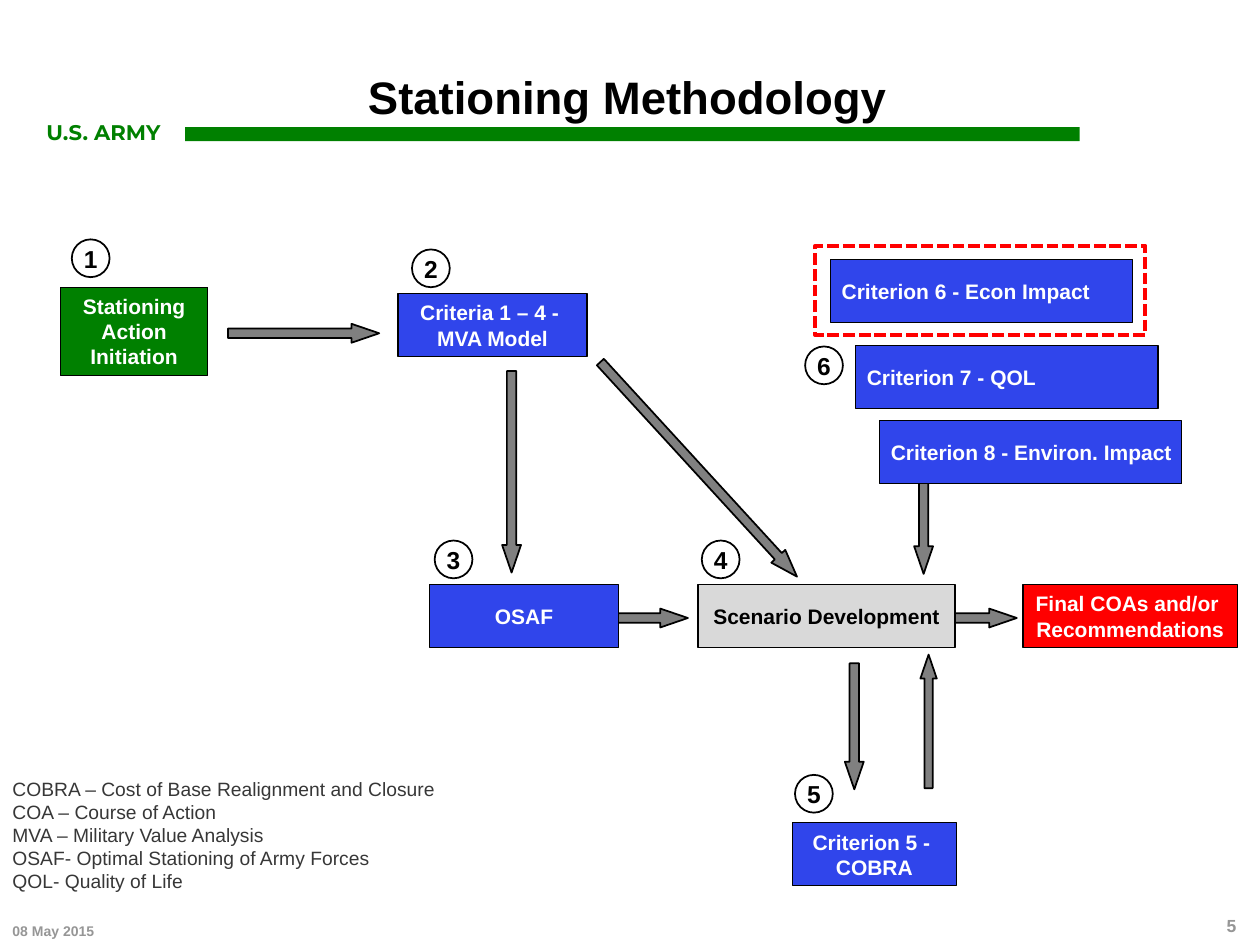
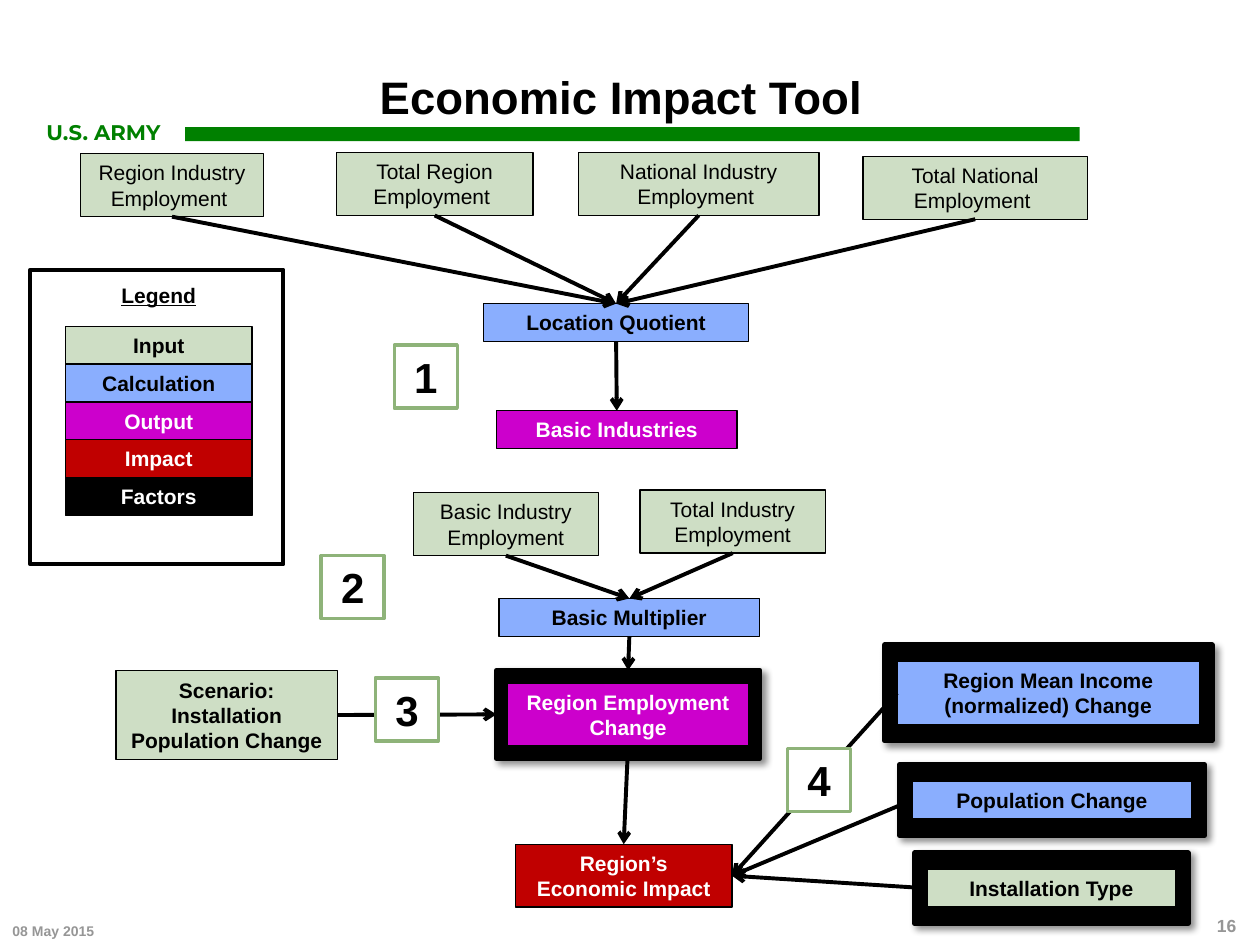
import dataclasses

import lxml.etree
import pptx
import pptx.dml.color
import pptx.enum.dml
import pptx.enum.shapes
import pptx.enum.text
import pptx.oxml.ns
import pptx.util

Inches = pptx.util.Inches
Pt = pptx.util.Pt
Shape = pptx.enum.shapes.MSO_SHAPE
Align = pptx.enum.text.PP_ALIGN
Anchor = pptx.enum.text.MSO_ANCHOR
TOP, LEFT, BOTTOM, RIGHT = range(4)


@dataclasses.dataclass(frozen=True)
class Theme:
    """Colours, fonts and type sizes of the deck."""
    black: str = "000000"
    white: str = "FFFFFF"
    green: str = "008000"
    blue: str = "3045EB"
    red: str = "FF0000"
    pale_grey: str = "D9D9D9"
    arrow_grey: str = "808080"
    footer_grey: str = "969696"
    glossary_grey: str = "373737"
    input_green: str = "CEDEC5"
    calculation_blue: str = "8AAEFE"
    output_purple: str = "CC00CC"
    impact_red: str = "C00000"
    tag_green: str = "8EB379"
    font: str = "Arial"
    brand_font: str = "Montserrat"
    title: float = 26
    tag: float = 24
    marker: float = 14
    brand: float = 12.1
    body: float = 12
    glossary: float = 11
    number: float = 10
    date: float = 8


THEME = Theme()
ROLES = {
    "Input": {"fill": THEME.input_green},
    "Calculation": {"fill": THEME.calculation_blue},
    "Output": {"fill": THEME.output_purple, "color": THEME.white},
    "Impact": {"fill": THEME.impact_red, "color": THEME.white},
    "Factors": {"fill": THEME.black, "color": THEME.white},
}
CRITERION = {"fill": THEME.blue, "color": THEME.white}


@dataclasses.dataclass(frozen=True)
class Box:
    """A rectangle in inches."""
    left: float
    top: float
    width: float
    height: float

    def inside(self, left, top, width, height):
        """Return a box placed relative to this one."""
        return Box(self.left + left, self.top + top, width, height)

    def grow(self, across, down):
        """Return this box with a margin added on every side."""
        return Box(self.left - across, self.top - down,
                   self.width + 2 * across, self.height + 2 * down)

    def lengths(self):
        """Return left, top, width and height as lengths."""
        return [Inches(side) for side in dataclasses.astuple(self)]


def rgb(colour):
    """Turn a hex string into a colour."""
    return pptx.dml.color.RGBColor.from_string(colour)


def apply(target, formats):
    """Set every format value on the target."""
    for name, value in formats.items():
        setattr(target, name, value)


def write(shape, text, color=THEME.black, size=THEME.body, bold=True, align=Align.CENTER,
          anchor=Anchor.MIDDLE, wrap=True, inset=(0.1, 0.05), spacing=None,
          font=THEME.font, underline=None):
    """Fill a shape with one paragraph per line of text."""
    across, down = (Inches(margin) for margin in inset)
    frame = shape.text_frame
    apply(frame, {"word_wrap": wrap, "vertical_anchor": anchor,
                  "margin_left": across, "margin_right": across,
                  "margin_top": down, "margin_bottom": down})
    for index, line in enumerate(text.split("\n")):
        paragraph = frame.add_paragraph() if index else frame.paragraphs[0]
        apply(paragraph, {"alignment": align, "line_spacing": spacing})
        run = paragraph.add_run()
        run.text = line
        apply(run.font, {"name": font, "size": Pt(size), "bold": bold, "underline": underline})
        run.font.color.rgb = rgb(color)


def label(slide, box, text, **formats):
    """Add a text box."""
    write(slide.shapes.add_textbox(*box.lengths()), text, **formats)


def block(slide, box, text="", fill=None, line=THEME.black, weight=0.75,
          kind=Shape.RECTANGLE, **formats):
    """Add a preset shape with fill, outline and text."""
    shape = slide.shapes.add_shape(kind, *box.lengths())
    shape.shadow.inherit = False
    if fill:
        shape.fill.solid()
        shape.fill.fore_color.rgb = rgb(fill)
    else:
        shape.fill.background()
    if line:
        shape.line.color.rgb = rgb(line)
        shape.line.width = Pt(weight)
    else:
        shape.line.fill.background()
    if text:
        write(shape, text, **formats)
    return shape


def marker(slide, box, number):
    """Add a numbered step circle."""
    block(slide, box, number, THEME.white, weight=1, kind=Shape.OVAL,
          size=THEME.marker, wrap=False, inset=(0, 0))


def tag(slide, box, number):
    """Add a numbered step square."""
    block(slide, box, number, THEME.white, THEME.tag_green, 2, size=THEME.tag)


def arrow(slide, box, rotation=0):
    """Add a thick grey arrow."""
    shape = block(slide, box, fill=THEME.arrow_grey, weight=1, kind=Shape.RIGHT_ARROW)
    shape.adjustments[0], shape.adjustments[1] = 0.5, 1.46
    shape.rotation = rotation


def factor_frame(slide, box):
    """Add a black frame with a soft shadow."""
    frame = block(slide, box, fill=THEME.black, weight=3)
    effects = frame._element.spPr.find(pptx.oxml.ns.qn("a:effectLst"))
    shadow = lxml.etree.SubElement(
        effects, pptx.oxml.ns.qn("a:outerShdw"), blurRad=str(Pt(4)), dist=str(Pt(3)),
        dir="2700000", algn="tl", rotWithShape="0")
    colour = lxml.etree.SubElement(shadow, pptx.oxml.ns.qn("a:srgbClr"), val=THEME.black)
    lxml.etree.SubElement(colour, pptx.oxml.ns.qn("a:alpha"), val="43000")
    return frame


def link(slide, source, target, leave=BOTTOM, enter=TOP):
    """Connect two shapes with a line that ends in an arrowhead."""
    connector = slide.shapes.add_connector(pptx.enum.shapes.MSO_CONNECTOR.STRAIGHT, 0, 0, 0, 0)
    connector.begin_connect(source, leave)
    connector.end_connect(target, enter)
    connector.line.color.rgb = rgb(THEME.black)
    connector.line.width = Pt(2.25)
    lxml.etree.SubElement(connector.line._get_or_add_ln(),
                          pptx.oxml.ns.qn("a:tailEnd"), type="arrow")
    lxml.etree.SubElement(connector._element.spPr, pptx.oxml.ns.qn("a:effectLst"))


def header(slide, box, title):
    """Draw the title, the green band and the service name."""
    block(slide, box.inside(1.2, 0.76, 7.1, 0.11), fill=THEME.green, line=None)
    label(slide, box.inside(0, 0.65, 1.2, 0.3), "U.S. ARMY", color=THEME.green,
          size=THEME.brand, font=THEME.brand_font, align=Align.LEFT, anchor=Anchor.BOTTOM)
    label(slide, box.inside(1.63, 0, 6.16, 0.74), title, size=THEME.title,
          anchor=Anchor.BOTTOM, inset=(0, 0), spacing=0.9)


def footer(slide, box, number):
    """Draw the date and the slide number."""
    shared = {"color": THEME.footer_grey, "anchor": Anchor.BOTTOM}
    label(slide, box.inside(0, 0.02, 2, 0.25), "08 May 2015", size=THEME.date,
          align=Align.LEFT, **shared)
    label(slide, box.inside(9.51, 0, 0.4, 0.25), number, size=THEME.number,
          align=Align.RIGHT, **shared)


def stationing_flow(slide, box):
    """Draw the steps from initiation to final recommendations."""
    for left, top, length, rotation in (
            (3.99, 1.75, 2.31, 47.5), (6.33, 1.98, 1.2, 90), (3.86, 2.93, 1.2, 0),
            (6.47, 2.93, 1.2, 0), (5.88, 3.79, 1, 90), (1.41, 0.67, 1.2, 0),
            (2.86, 1.77, 1.6, 90)):
        arrow(slide, box.inside(left, top, length, 0.15), rotation)
    arrow(slide, box.inside(6.44, 3.76, 1.06, 0.13), 270)
    for left, top, width, text, fill, color in (
            (2.76, 0.43, 1.5, "Criteria 1 – 4 - \nMVA Model", THEME.blue, THEME.white),
            (3.01, 2.74, 1.5, "OSAF", THEME.blue, THEME.white),
            (5.14, 2.74, 2.04, "Scenario Development", THEME.pale_grey, THEME.black),
            (5.89, 4.63, 1.3, "Criterion 5 - \nCOBRA", THEME.blue, THEME.white),
            (7.72, 2.74, 1.7, "Final COAs and/or \nRecommendations", THEME.red, THEME.white)):
        block(slide, box.inside(left, top, width, 0.5), text, fill,
              color=color, wrap=False, inset=(0.09, 0.05))
    block(slide, box.inside(0.08, 0.38, 1.17, 0.7), "Stationing Action Initiation",
          THEME.green, color=THEME.white, inset=(0.09, 0.05))
    places = ((0.17, 0), (2.87, 0.08), (3.05, 2.39), (5.17, 2.39), (5.91, 4.25))
    for number, (left, top) in enumerate(places, 1):
        marker(slide, box.inside(left, top, 0.3, 0.3), str(number))


def criteria_stack(slide, box):
    """Draw criteria 6 to 8 and highlight the first."""
    for left, top, text in ((0.2, 0.11, "Criterion 6 - Econ Impact"),
                            (0.4, 0.79, "Criterion 7 - QOL"),
                            (0.59, 1.39, "Criterion 8 - Environ. Impact")):
        block(slide, box.inside(left, top, 2.4, 0.5), text, **CRITERION,
              align=Align.LEFT, wrap=False, inset=(0.09, 0.05))
    marker(slide, box.inside(0, 0.8, 0.3, 0.3), "6")
    highlight = block(slide, box.inside(0.08, 0, 2.62, 0.71), line=THEME.red, weight=2.25)
    highlight.line.dash_style = pptx.enum.dml.MSO_LINE.SQUARE_DOT


def glossary(slide, box):
    """List the abbreviations."""
    label(slide, box, "COBRA – Cost of Base Realignment and Closure\n"
          "COA – Course of Action\nMVA – Military Value Analysis\n"
          "OSAF- Optimal Stationing of Army Forces\nQOL- Quality of Life",
          color=THEME.glossary_grey, size=THEME.glossary, bold=False,
          align=Align.LEFT, anchor=Anchor.TOP)


def legend(slide, box):
    """Draw the colour key."""
    block(slide, box, weight=2.25)
    label(slide, box.inside(0.28, 0.05, 1.48, 0.3), "Legend", underline=True)
    for row, (role, look) in enumerate(ROLES.items()):
        block(slide, box.inside(0.28, 0.45 + 0.3 * row, 1.48, 0.3), role, **look)


def location_quotient(slide, box):
    """Draw step 1, from employment inputs to basic industries."""
    quotient = block(slide, box.inside(3.2, 1.2, 2.1, 0.3), "Location Quotient",
                     **ROLES["Calculation"])
    for left, top, width, text in ((0, 0.01, 1.45, "Region Industry Employment "),
                                   (2.03, 0, 1.56, "Total Region Employment "),
                                   (3.95, 0, 1.91, "National Industry Employment "),
                                   (6.21, 0.03, 1.78, "Total National Employment ")):
        employment = block(slide, box.inside(left, top, width, 0.5), text,
                           **ROLES["Input"], bold=False)
        link(slide, employment, quotient)
    industries = block(slide, box.inside(3.3, 2.05, 1.91, 0.3), "Basic Industries",
                       **ROLES["Output"])
    link(slide, quotient, industries)
    tag(slide, box.inside(2.49, 1.53, 0.5, 0.5), "1")


def employment_change(slide, box):
    """Draw steps 2 and 3 and return the employment change."""
    change_box = box.inside(3.11, 1.53, 1.91, 0.5)
    frame = factor_frame(slide, change_box.grow(0.09, 0.1))
    multiplier = block(slide, box.inside(3.04, 0.86, 2.07, 0.3), "Basic Multiplier",
                       **ROLES["Calculation"])
    for left, top, text in ((2.36, 0.02, "Basic Industry Employment"),
                            (4.16, 0, "Total Industry Employment")):
        employment = block(slide, box.inside(left, top, 1.47, 0.5), text,
                           **ROLES["Input"], bold=False)
        link(slide, employment, multiplier)
    scenario = block(slide, box.inside(0, 1.43, 1.76, 0.71),
                     "Scenario: Installation Population Change", **ROLES["Input"])
    link(slide, scenario, frame, RIGHT, LEFT)
    link(slide, multiplier, frame)
    change = block(slide, change_box, "Region Employment Change", **ROLES["Output"])
    tag(slide, box.inside(1.63, 0.52, 0.5, 0.5), "2")
    tag(slide, box.inside(2.06, 1.49, 0.5, 0.5), "3")
    return change


def economic_impact(slide, box, change):
    """Draw step 4, where the factors meet in the impact."""
    impact = block(slide, box.inside(0, 1.57, 1.72, 0.5), "Region’s Economic Impact",
                   **ROLES["Impact"])
    link(slide, change, impact)
    for left, top, width, height, text, role in (
            (3.03, 0.12, 2.4, 0.5, "Region Mean Income (normalized) Change", "Calculation"),
            (3.15, 1.07, 2.22, 0.3, "Population Change", "Calculation"),
            (3.27, 1.77, 1.97, 0.3, "Installation Type", "Input")):
        factor_box = box.inside(left, top, width, height)
        factor_frame(slide, factor_box.grow(0.1, 0.13))
        factor = block(slide, factor_box, text, **ROLES[role])
        link(slide, factor, impact, LEFT, RIGHT)
    tag(slide, box.inside(2.16, 0.81, 0.5, 0.5), "4")


def add_slide(deck, title, number):
    """Add a blank slide with the shared header and footer."""
    slide = deck.slides.add_slide(deck.slide_layouts[6])
    header(slide, Box(0.27, 0.25, 8.3, 0.95), title)
    footer(slide, Box(0, 7.23, 10, 0.27), number)
    return slide


def main():
    """Build and save the deck."""
    deck = pptx.Presentation()
    apply(deck, {"slide_width": Inches(10), "slide_height": Inches(7.5)})

    methodology = add_slide(deck, "Stationing Methodology", "5")
    stationing_flow(methodology, Box(0.4, 1.9, 9.42, 5.13))
    criteria_stack(methodology, Box(6.39, 1.95, 2.99, 1.89))
    glossary(methodology, Box(0, 6.12, 5.25, 1.03))

    impact_tool = add_slide(deck, "Economic Impact Tool ", "16")
    legend(impact_tool, Box(0.24, 2.14, 2.01, 2.34))
    location_quotient(impact_tool, Box(0.64, 1.21, 7.99, 2.35))
    change = employment_change(impact_tool, Box(0.92, 3.89, 5.62, 2.14))
    economic_impact(impact_tool, Box(4.09, 5.13, 5.52, 2.22), change)
    deck.save("out.pptx")


if __name__ == "__main__":
    main()
